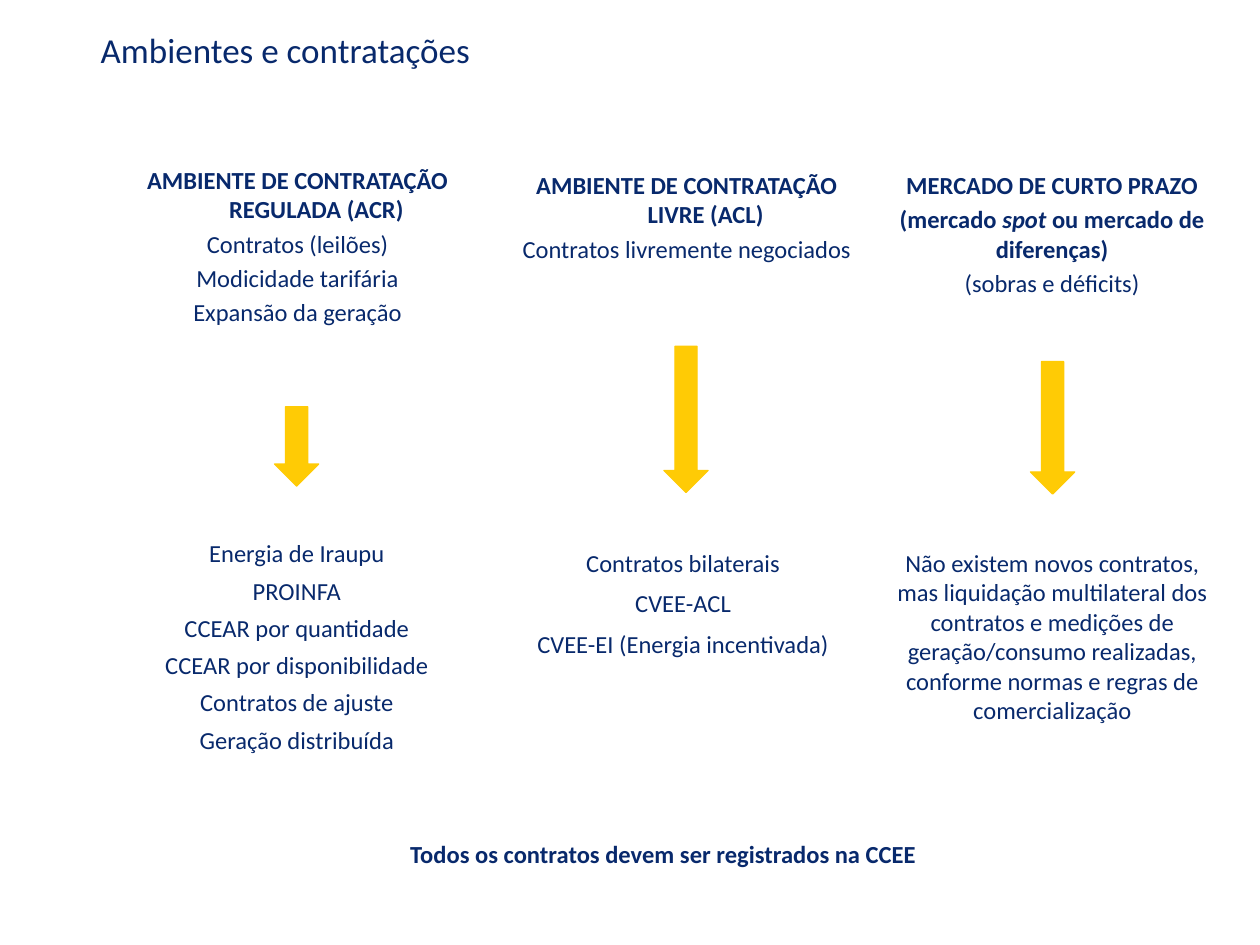
"""Build the slide on energy contracting environments."""
from dataclasses import dataclass

from pptx import Presentation
from pptx.dml.color import RGBColor
from pptx.enum import shapes, text
from pptx.util import Cm, Pt

NAVY = RGBColor(0x08, 0x29, 0x6C)
YELLOW = RGBColor(0xFF, 0xCB, 0x05)
FONT = "Calibri"


@dataclass
class Run:
    text: str
    bold: bool = False
    italic: bool = False


@dataclass
class Box:
    left: float
    top: float
    width: float
    height: float
    paragraphs: list[list[Run]]
    size: float = 14
    gap: float = 0
    spacing: float = 1.0
    hanging: bool = False
    grow: bool = False
    align: text.PP_ALIGN = text.PP_ALIGN.CENTER
    anchor: text.MSO_ANCHOR = text.MSO_ANCHOR.TOP


@dataclass
class Arrow:
    center: float
    top: float
    height: float
    width: float = 0.89


def plain(*lines: str) -> list[list[Run]]:
    """Make one regular paragraph per line."""
    return [[Run(line)] for line in lines]


def bold(line: str) -> list[Run]:
    """Make a bold paragraph."""
    return [Run(line, bold=True)]


def draw_box(slide, box: Box) -> None:
    """Draw a text box with its paragraphs."""
    sp = slide.shapes.add_textbox(Cm(box.left), Cm(box.top), Cm(box.width), Cm(box.height))
    tf = sp.text_frame
    tf.word_wrap = True
    tf.vertical_anchor = box.anchor
    if box.grow:
        tf.auto_size = text.MSO_AUTO_SIZE.SHAPE_TO_FIT_TEXT
    for i, runs in enumerate(box.paragraphs):
        p = tf.add_paragraph() if i else tf.paragraphs[0]
        p.alignment = box.align
        p.line_spacing = box.spacing
        p.space_before = Pt(box.gap if i else 0)
        if box.hanging and i == 0:
            pPr = p._p.get_or_add_pPr()
            pPr.set("marL", str(Cm(0.76)))
            pPr.set("indent", str(-Cm(0.76)))
        for run in runs:
            r = p.add_run()
            r.text = run.text
            r.font.name = FONT
            r.font.size = Pt(box.size)
            r.font.bold = run.bold
            r.font.italic = run.italic
            r.font.color.rgb = NAVY


def draw_arrow(slide, arrow: Arrow) -> None:
    """Draw a yellow arrow pointing down."""
    sp = slide.shapes.add_shape(
        shapes.MSO_SHAPE.DOWN_ARROW, Cm(arrow.center - arrow.width / 2),
        Cm(arrow.top), Cm(arrow.width), Cm(arrow.height))
    sp.adjustments[0] = sp.adjustments[1] = 0.5
    sp.shadow.inherit = False
    sp.fill.solid()
    sp.fill.fore_color.rgb = YELLOW
    sp.line.color.rgb = YELLOW
    sp.line.width = Pt(0.75)


TITLE = Box(1.78, 0.41, 20.83, 1.19, plain("Ambientes e contratações"), size=20,
            align=text.PP_ALIGN.LEFT, anchor=text.MSO_ANCHOR.MIDDLE)

ENVIRONMENTS = [
    Box(2.01, 3.2, 7.98, 4.17, [
        bold("AMBIENTE DE CONTRATAÇÃO REGULADA (ACR)"),
        *plain("Contratos (leilões)", "Modicidade tarifária", "Expansão da geração"),
    ], gap=2.8, hanging=True),
    Box(9.96, 3.3, 7.77, 4.17, [
        bold("AMBIENTE DE CONTRATAÇÃO LIVRE (ACL)"),
        *plain("Contratos livremente negociados"),
    ], gap=2.8, hanging=True),
    Box(17.73, 3.3, 6.96, 4.17, [
        bold("MERCADO DE CURTO PRAZO"),
        [Run("(mercado ", True), Run("spot", True, True),
         Run(" ou mercado de diferenças)", True)],
        *plain("(sobras e déficits)"),
    ], gap=2.8, hanging=True),
]

CONTRACTS = [
    Box(2.29, 10.82, 7.39, 4.8, plain(
        "Energia de Iraupu", "PROINFA", "CCEAR por quantidade",
        "CCEAR por disponibilidade", "Contratos de ajuste", "Geração distribuída",
    ), gap=7, spacing=0.85, grow=True),
    Box(9.96, 10.97, 7.62, 3.43, plain(
        "Contratos bilaterais", "CVEE-ACL", "CVEE-EI (Energia incentivada)",
    ), gap=7, spacing=0.95, grow=True),
    Box(17.75, 10.92, 6.93, 5.64, plain(
        "Não existem novos contratos,",
        "mas liquidação multilateral dos contratos e medições de geração/consumo "
        "realizadas, conforme normas e regras de comercialização",
    ), grow=True),
]

NOTE = Box(2.03, 16.79, 22.68, 1.45,
           [bold("Todos os contratos devem ser registrados na CCEE")], grow=True)

ARROWS = [Arrow(5.98, 8.2, 1.6), Arrow(13.83, 6.98, 2.95), Arrow(21.22, 7.29, 2.67)]


def main() -> None:
    """Create the presentation and save it."""
    prs = Presentation()
    prs.slide_width, prs.slide_height = Cm(25.4), Cm(19.05)
    s = prs.slides.add_slide(prs.slide_layouts[6])
    for box in [TITLE, *ENVIRONMENTS, *CONTRACTS, NOTE]:
        draw_box(s, box)
    for arrow in ARROWS:
        draw_arrow(s, arrow)
    prs.save("out.pptx")


if __name__ == "__main__":
    main()
